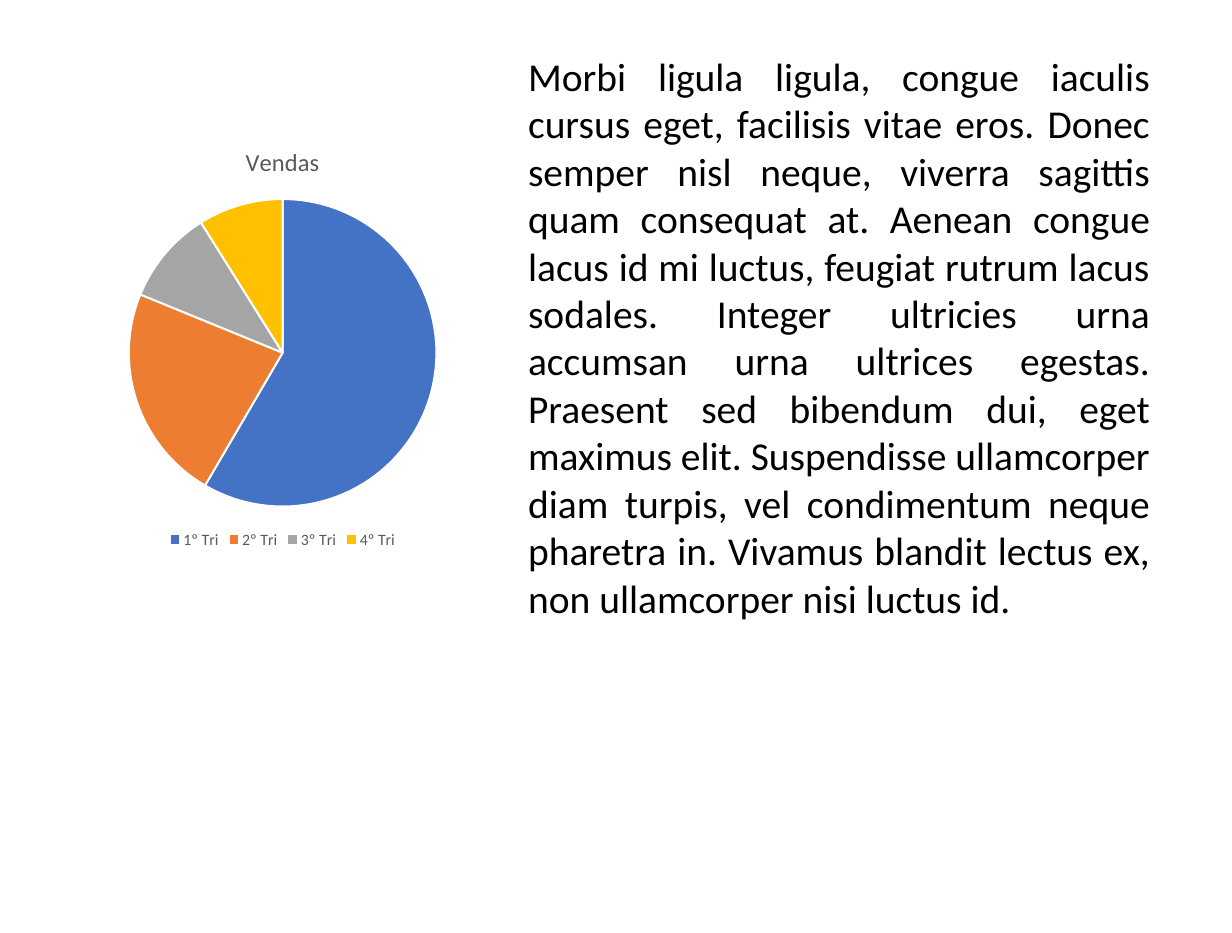
from dataclasses import dataclass

from pptx import Presentation
from pptx.chart.data import CategoryChartData
from pptx.dml.color import RGBColor
from pptx.enum.chart import XL_CHART_TYPE, XL_LEGEND_POSITION
from pptx.enum.text import MSO_AUTO_SIZE, PP_ALIGN
from pptx.slide import Slide
from pptx.text.text import Font
from pptx.util import Pt

PIE = XL_CHART_TYPE.PIE
BOTTOM = XL_LEGEND_POSITION.BOTTOM
GROW = MSO_AUTO_SIZE.SHAPE_TO_FIT_TEXT
JUSTIFY = PP_ALIGN.JUSTIFY

FACE = "Calibri"
COLORS = {
    "text": "000000",
    "label": "595959",
    "edge": "FFFFFF",
    "blue": "4472C4",
    "orange": "ED7D31",
    "gray": "A5A5A5",
    "gold": "FFC000",
}
BODY = (
    "Morbi ligula ligula, congue iaculis cursus eget, facilisis vitae eros. "
    "Donec semper nisl neque, viverra sagittis quam consequat at. "
    "Aenean congue lacus id mi luctus, feugiat rutrum lacus sodales. "
    "Integer ultricies urna accumsan urna ultrices egestas. "
    "Praesent sed bibendum dui, eget maximus elit. "
    "Suspendisse ullamcorper diam turpis, vel condimentum neque pharetra in. "
    "Vivamus blandit lectus ex, non ullamcorper nisi luctus id."
)


@dataclass
class Box:
    left: float
    top: float
    width: float
    height: float

    def place(self) -> tuple[Pt, Pt, Pt, Pt]:
        return Pt(self.left), Pt(self.top), Pt(self.width), Pt(self.height)


@dataclass
class Slice:
    name: str
    value: int
    color: str


SLICES = [
    Slice("1º Tri", 59, "blue"),
    Slice("2º Tri", 23, "orange"),
    Slice("3º Tri", 10, "gray"),
    Slice("4º Tri", 9, "gold"),
]


def paint(name: str) -> RGBColor:
    return RGBColor.from_string(COLORS[name])


def style(font: Font, size: float, color: str) -> None:
    font.name = FACE
    font.size = Pt(size)
    font.bold = False
    font.color.rgb = paint(color)


def add_body(slide: Slide, box: Box, text: str) -> None:
    frame = slide.shapes.add_textbox(*box.place()).text_frame
    frame.word_wrap = True
    frame.auto_size = GROW
    para = frame.paragraphs[0]
    para.text = text
    para.alignment = JUSTIFY
    style(para.font, 30, "text")


def add_pie(slide: Slide, box: Box, title: str, slices: list[Slice]) -> None:
    data = CategoryChartData()
    data.categories = [part.name for part in slices]
    data.add_series(title, [part.value for part in slices])
    chart = slide.shapes.add_chart(PIE, *box.place(), data).chart
    style(chart.font, 10, "text")

    # Title and legend
    chart.has_title = True
    head = chart.chart_title
    head.include_in_layout = False
    head.text_frame.text = title
    style(head.text_frame.paragraphs[0].font, 18.6, "label")
    chart.has_legend = True
    chart.legend.position = BOTTOM
    chart.legend.include_in_layout = False
    style(chart.legend.font, 12, "label")

    # Slice colours and white edges
    plot = chart.plots[0]
    plot.vary_by_categories = True
    for index, part in enumerate(slices):
        form = plot.series[0].points[index].format
        form.fill.solid()
        form.fill.fore_color.rgb = paint(part.color)
        form.line.color.rgb = paint("edge")
        form.line.width = Pt(1.5)


def main() -> None:
    deck = Presentation()
    deck.slide_width, deck.slide_height = Pt(935.28), Pt(708.48)
    slide = deck.slides.add_slide(deck.slide_layouts[6])

    # Text on the right, sales pie on the left
    add_body(slide, Box(393.84, 36, 486.72, 443.52), BODY)
    add_pie(slide, Box(35.28, 96.48, 358.56, 323.28), "Vendas", SLICES)
    deck.save("out.pptx")


if __name__ == "__main__":
    main()
